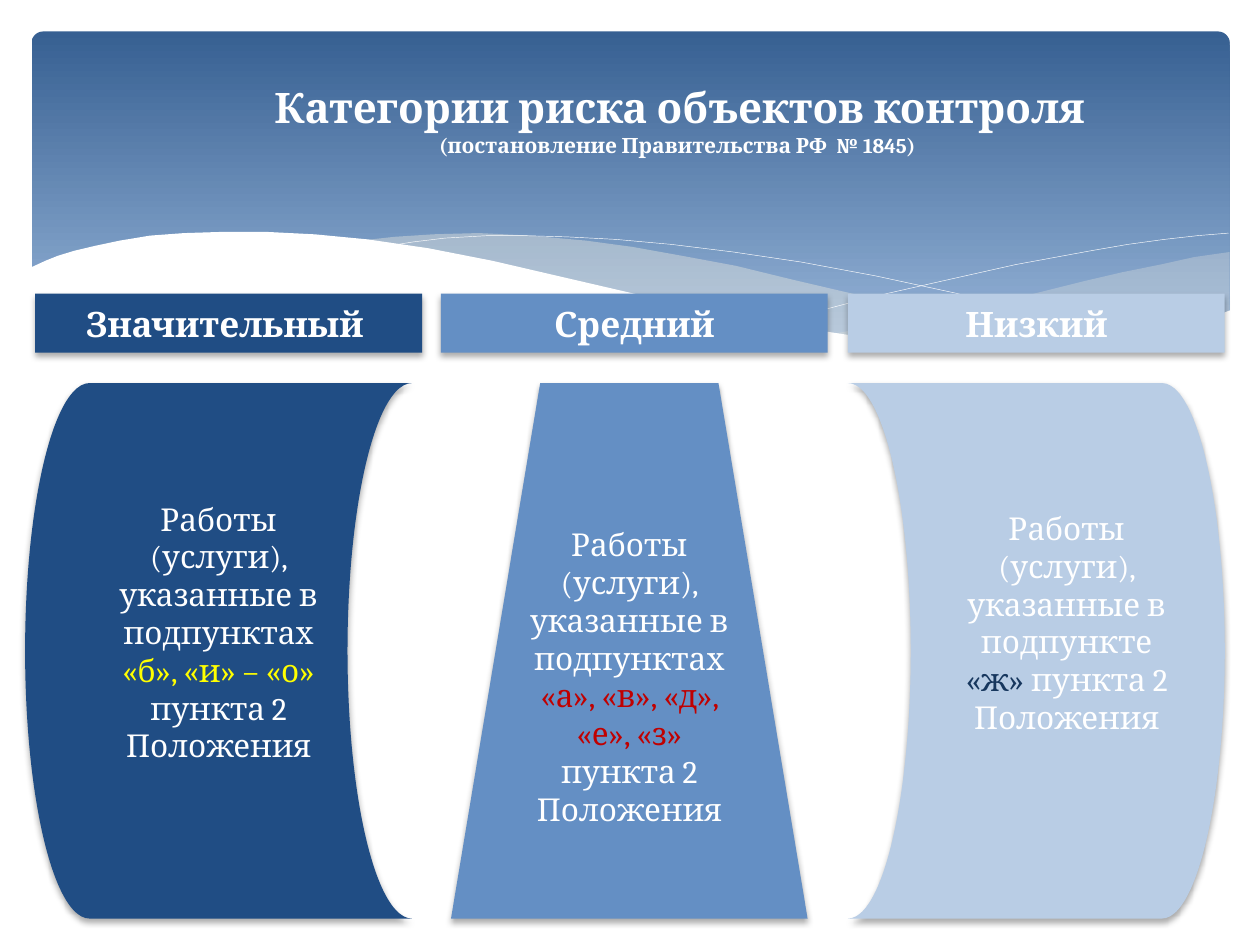
"""Build a slide showing three risk categories of inspected facilities."""
import dataclasses

import lxml.etree
import pptx
import pptx.dml.color
import pptx.enum.shapes
import pptx.enum.text
import pptx.oxml.ns
import pptx.util

Inches = pptx.util.Inches
Pt = pptx.util.Pt
Shape = pptx.enum.shapes.MSO_SHAPE
Anchor = pptx.enum.text.MSO_ANCHOR
rgb = pptx.dml.color.RGBColor.from_string
qn = pptx.oxml.ns.qn


@dataclasses.dataclass(frozen=True)
class Theme:
    font: str = "Cambria"
    white: str = "FFFFFF"
    banner_top: str = "376092"
    banner_bottom: str = "95B3D7"
    wave: str = "EEECE1"
    high: str = "204D84"
    middle: str = "648FC4"
    low: str = "B9CDE5"
    yellow: str = "FFFF00"
    red: str = "C00000"
    navy: str = "17375E"
    title: int = 24
    heading: int = 20
    body: int = 18
    note: int = 12


theme = Theme()


def write_text(box, paragraphs, bold=False):
    frame = box.text_frame
    frame.word_wrap = True
    for index, spans in enumerate(paragraphs):
        para = frame.add_paragraph() if index else frame.paragraphs[0]
        para.alignment = pptx.enum.text.PP_ALIGN.CENTER
        for text, size, color in spans:
            span = para.add_run()
            span.text = text
            span.font.name = theme.font
            span.font.size = Pt(size)
            span.font.bold = bold
            span.font.color.rgb = rgb(color)


def add_block(page, kind, left, top, width, height, color):
    block = page.shapes.add_shape(kind, Inches(left), Inches(top), Inches(width), Inches(height))
    block.fill.solid()
    block.fill.fore_color.rgb = rgb(color)
    block.line.fill.background()
    block.shadow.inherit = False
    effects = block.element.spPr.find(qn("a:effectLst"))
    shadow = lxml.etree.SubElement(effects, qn("a:outerShdw"), blurRad=str(Pt(3.5)),
                                   dist=str(Pt(2.2)), dir="5400000", rotWithShape="0")
    shade = lxml.etree.SubElement(shadow, qn("a:srgbClr"), val="000000")
    lxml.etree.SubElement(shade, qn("a:alpha"), val="32000")
    return block


deck = pptx.Presentation()
deck.slide_width, deck.slide_height = Inches(10), Inches(7.5)
page = deck.slides.add_slide(deck.slide_layouts[6])

banner = page.shapes.add_shape(Shape.ROUNDED_RECTANGLE, Inches(0.25), Inches(0.25), Inches(9.51), Inches(2.7))
banner.adjustments[0] = 0.034
banner.shadow.inherit = False
banner.line.fill.background()
banner.fill.gradient()
banner.fill.gradient_angle = 270
for stop, color, position in zip(banner.fill.gradient_stops, (theme.banner_top, theme.banner_bottom), (0, 0.9)):
    stop.color.rgb = rgb(color)
    stop.position = position

right_wave = [
    (9.76, 2), (9.48, 2.04), (9.21, 2.1), (8.91, 2.16), (8.61, 2.23), (8.05, 2.37), (7.53, 2.48),
    (7.06, 2.57), (6.61, 2.65), (6.91, 2.69), (7.32, 2.74), (7.69, 2.77), (8.03, 2.78), (8.44, 2.77),
    (8.81, 2.73), (9.13, 2.67), (9.42, 2.59), (9.76, 2.47)]
middle_wave = [
    (8.93, 2.73), (8.37, 2.65), (7.75, 2.54), (7.06, 2.4), (6.29, 2.22), (5.84, 2.11), (5.41, 2.03),
    (5.02, 1.96), (4.65, 1.91), (4.2, 1.87), (3.8, 1.85), (3.44, 1.86), (3.13, 1.88), (2.86, 1.91),
    (3.23, 1.96), (3.62, 2.03), (4.04, 2.11), (4.49, 2.22), (5.3, 2.4), (6.01, 2.55), (6.65, 2.66),
    (7.22, 2.74), (7.73, 2.77), (8.18, 2.78), (8.57, 2.77)]
falling_line = [
    (3.09, 1.95), (3.28, 1.92), (3.53, 1.89), (3.87, 1.87), (4.16, 1.87), (4.5, 1.88), (4.89, 1.9),
    (5.33, 1.94), (5.82, 2), (6.36, 2.08), (6.95, 2.19), (7.6, 2.33), (8.31, 2.51), (9.07, 2.72)]
rising_line = [
    (6.13, 2.57), (6.53, 2.46), (6.95, 2.35), (7.48, 2.23), (8.06, 2.1), (8.66, 1.99), (8.95, 1.94),
    (9.24, 1.9), (9.51, 1.87), (9.75, 1.85)]
white_wave = [
    (9.77, 2.46), (9.59, 2.53), (9.4, 2.59), (9.2, 2.65), (8.99, 2.69), (8.75, 2.73), (8.5, 2.75),
    (8.23, 2.77), (7.93, 2.76), (7.61, 2.75), (7.26, 2.72), (6.88, 2.68), (6.48, 2.62), (6.03, 2.54),
    (5.55, 2.45), (5.03, 2.33), (4.47, 2.2), (3.91, 2.07), (3.4, 1.97), (2.92, 1.9), (2.5, 1.86),
    (2.11, 1.84), (1.77, 1.84), (1.46, 1.85), (1.19, 1.87), (0.95, 1.91), (0.76, 1.95), (0.59, 1.99),
    (0.46, 2.03), (0.36, 2.07), (0.23, 2.13), (0.23, 3.29), (9.77, 3.29)]

for points, color, opacity in (
    (right_wave, theme.wave, 29),
    (middle_wave, theme.wave, 40),
    (falling_line, theme.white, None),
    (rising_line, theme.white, None),
    (white_wave, theme.white, 100),
):
    corners = [(Inches(x), Inches(y)) for x, y in points]
    builder = page.shapes.build_freeform(*corners[0])
    builder.add_line_segments(corners[1:], close=opacity is not None)
    wave = builder.convert_to_shape()
    wave.shadow.inherit = False
    if opacity is None:
        wave.fill.background()
        wave.line.color.rgb = rgb(color)
        wave.line.width = Pt(0.25)
    else:
        wave.line.fill.background()
        wave.fill.solid()
        wave.fill.fore_color.rgb = rgb(color)
        tint = wave.element.spPr.find(qn("a:solidFill"))[0]
        lxml.etree.SubElement(tint, qn("a:alpha"), val=str(opacity * 1000))

for heading, left, width, color in (
    ("Значительный ", 0.28, 3.07, theme.high),
    ("Средний", 3.5, 3.07, theme.middle),
    ("Низкий", 6.73, 2.99, theme.low),
):
    box = add_block(page, Shape.RECTANGLE, left, 2.33, width, 0.47, color)
    box.text_frame.vertical_anchor = Anchor.MIDDLE
    write_text(box, [[(heading, theme.heading, theme.white)]], bold=True)

intro = "Работы (услуги), указанные в "
plural = (intro + "подпунктах ", theme.body, theme.white)
singular = (intro + "подпункте ", theme.body, theme.white)
ending = ("пункта 2 Положения", theme.body, theme.white)

middle_panel = add_block(page, Shape.TRAPEZOID, 3.58, 3.04, 2.83, 4.25, theme.middle)
write_text(middle_panel, [[plural, ("«а», «в», «д», «е», «з» ", theme.body, theme.red), ending]])
low_panel = add_block(page, Shape.FLOWCHART_STORED_DATA, 6.73, 3.04, 2.99, 4.25, theme.low)
low_panel.rotation = 180
high_panel = add_block(page, Shape.FLOWCHART_STORED_DATA, 0.2, 3.04, 3.07, 4.25, theme.high)
write_text(high_panel, [[plural, ("«б», «и» – «о»", theme.body, theme.yellow)], [ending]])
for panel in (middle_panel, high_panel):
    panel.text_frame.vertical_anchor = Anchor.MIDDLE
    panel.text_frame.margin_bottom = Inches(0.35)

title_box = page.shapes.add_textbox(Inches(1.85), Inches(0.6), Inches(7.09), Inches(0.71))
write_text(title_box, [
    [("Категории риска объектов контроля", theme.title, theme.white)],
    [("(постановление Правительства РФ  № 1845) ", theme.note, theme.white)],
], bold=True)

low_text = page.shapes.add_textbox(Inches(7.52), Inches(3.99), Inches(1.89), Inches(1.92))
write_text(low_text, [[singular, ("«ж» ", theme.body, theme.navy), ending]])

deck.save("out.pptx")
